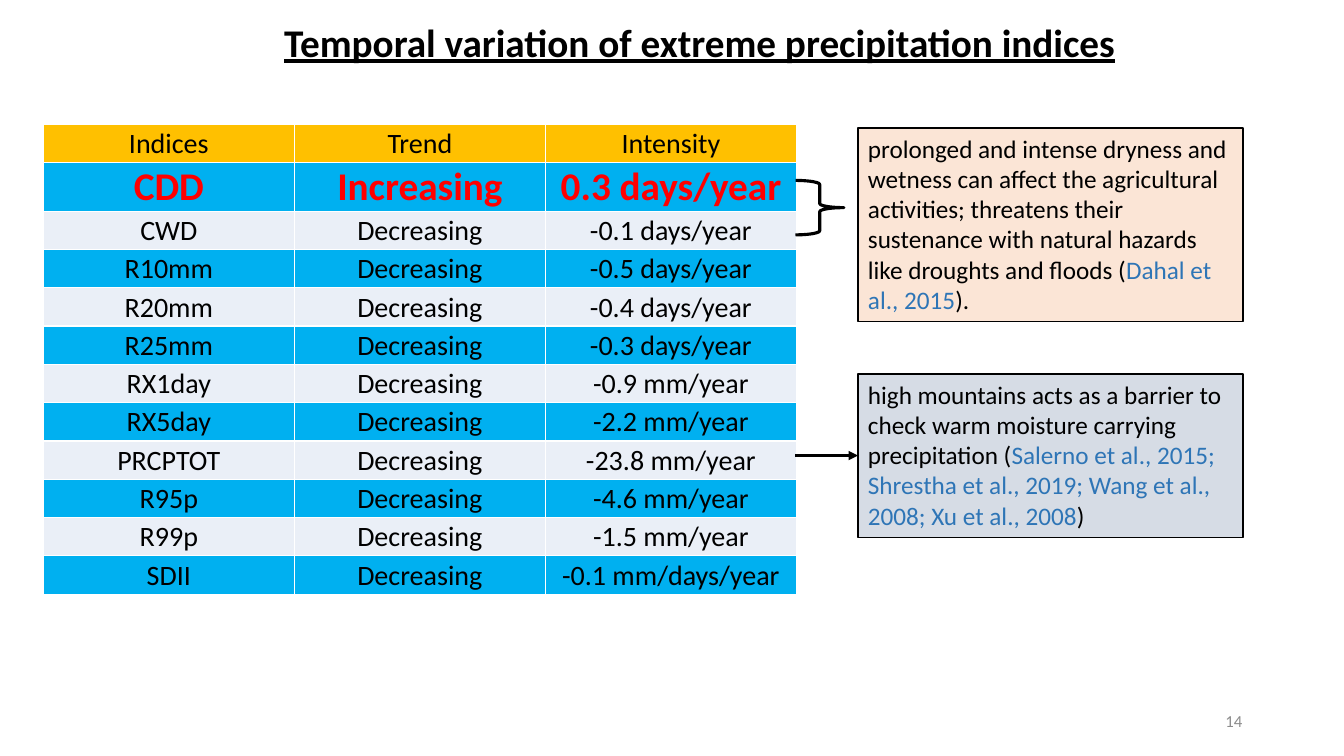
"""Build the slide on temporal variation of extreme precipitation indices."""
from dataclasses import dataclass

from lxml import etree
from pptx import Presentation
from pptx.dml.color import RGBColor
from pptx.enum.shapes import MSO_CONNECTOR, MSO_SHAPE
from pptx.enum.text import MSO_ANCHOR, MSO_AUTO_SIZE, PP_ALIGN
from pptx.oxml.ns import qn
from pptx.util import Pt

EMU_PER_PX = 9144
FONT = "Calibri"
RECTANGLE = MSO_SHAPE.RECTANGLE
RIGHT_BRACE = MSO_SHAPE.RIGHT_BRACE
STRAIGHT = MSO_CONNECTOR.STRAIGHT
MIDDLE, TOP = MSO_ANCHOR.MIDDLE, MSO_ANCHOR.TOP
LEFT, CENTER, RIGHT = PP_ALIGN.LEFT, PP_ALIGN.CENTER, PP_ALIGN.RIGHT
FIT_SHAPE = MSO_AUTO_SIZE.SHAPE_TO_FIT_TEXT
LEFT_SIDE = 1
COLORS = {
    "black": "000000", "white": "FFFFFF", "red": "FF0000", "header": "FFC000",
    "blue_row": "00B0F0", "pale_row": "EAEFF7", "peach": "FBE5D6",
    "slate": "D6DCE5", "citation": "2E75B6", "page": "8C8C8C",
}
TABLE_LEFT, TABLE_TOP, COLUMN_WIDTH, ROW_HEIGHT = 43, 123, 249, 38
HEADER = ("Indices", "Trend", "Intensity")
INTENSITIES = {
    "CDD": "0.3 days/year", "CWD": "-0.1 days/year", "R10mm": "-0.5 days/year",
    "R20mm": "-0.4 days/year", "R25mm": "-0.3 days/year", "RX1day": "-0.9 mm/year",
    "RX5day": "-2.2 mm/year", "PRCPTOT": "-23.8 mm/year", "R95p": "-4.6 mm/year",
    "R99p": "-1.5 mm/year", "SDII": "-0.1 mm/days/year",
}


@dataclass(frozen=True)
class Note:
    top: int
    height: int
    fill: str
    statement: str
    citation: str
    closing: str


@dataclass(frozen=True)
class Label:
    left: int
    top: int
    width: int
    height: int
    text: str
    size: int
    color: str
    align: PP_ALIGN
    anchor: MSO_ANCHOR
    wrap: bool
    heading: bool


NOTES = (
    Note(127, 192, "peach",
         "prolonged and intense dryness and wetness can affect the agricultural activities; "
         "threatens their sustenance with natural hazards like droughts and floods (",
         "Dahal et al., 2015", ")."),
    Note(371, 162, "slate",
         "high mountains acts as a barrier to check warm moisture carrying precipitation (",
         "Salerno et al., 2015; Shrestha et al., 2019; Wang et al., 2008; Xu et al., 2008", ")"),
)
LABELS = (
    Label(272, 13, 854, 57, "Temporal variation of extreme precipitation indices",
          28, "black", LEFT, TOP, False, True),
    Label(942, 695, 300, 40, "14", 12, "page", RIGHT, MIDDLE, True, False),
)


def px(length: int) -> int:
    return length * EMU_PER_PX


def rgb(name: str) -> RGBColor:
    return RGBColor.from_string(COLORS[name])


def style_run(run, size: int, color: str, bold: bool = False) -> None:
    run.font.name = FONT
    run.font.size = Pt(size)
    run.font.bold = bold
    run.font.color.rgb = rgb(color)


def style_line(line, width: float) -> None:
    line.color.rgb = rgb("black")
    line.width = Pt(width)


def add_borders(cell) -> None:
    properties = cell._tc.get_or_add_tcPr()
    for side in ("lnL", "lnR", "lnT", "lnB"):
        border = etree.SubElement(properties, qn(f"a:{side}"), w=str(Pt(1)))
        fill = etree.SubElement(border, qn("a:solidFill"))
        etree.SubElement(fill, qn("a:srgbClr"), val=COLORS["white"])


def fill_cell(cell, text: str, fill: str, emphasized: bool) -> None:
    add_borders(cell)
    cell.fill.solid()
    cell.fill.fore_color.rgb = rgb(fill)
    cell.vertical_anchor = MIDDLE
    cell.margin_left = cell.margin_right = cell.margin_top = px(1)
    cell.margin_bottom = 0
    cell.text_frame.text = text
    paragraph = cell.text_frame.paragraphs[0]
    paragraph.alignment = CENTER
    style_run(paragraph.runs[0], 28 if emphasized else 20,
              "red" if emphasized else "black", emphasized)


def add_index_table(slide) -> None:
    rows = [HEADER] + [
        (index, "Decreasing" if intensity.startswith("-") else "Increasing", intensity)
        for index, intensity in INTENSITIES.items()
    ]
    table = slide.shapes.add_table(
        len(rows), len(HEADER), px(TABLE_LEFT), px(TABLE_TOP),
        px(COLUMN_WIDTH * len(HEADER)), px(ROW_HEIGHT * len(rows))).table
    table.first_row = False
    table.horz_banding = False
    for row_number, row in enumerate(rows):
        band = "blue_row" if row_number % 2 else "pale_row"
        fill = band if row_number else "header"
        for column_number, text in enumerate(row):
            fill_cell(table.cell(row_number, column_number), text, fill,
                      row[1] == "Increasing")


def add_label(slide, label: Label) -> None:
    shape = slide.shapes.add_textbox(
        px(label.left), px(label.top), px(label.width), px(label.height))
    text_frame = shape.text_frame
    text_frame.text = label.text
    text_frame.word_wrap = label.wrap
    text_frame.vertical_anchor = label.anchor
    paragraph = text_frame.paragraphs[0]
    paragraph.alignment = label.align
    run = paragraph.runs[0]
    style_run(run, label.size, label.color, label.heading)
    run.font.underline = label.heading


def add_brace(slide) -> None:
    brace = slide.shapes.add_shape(RIGHT_BRACE, px(789), px(179), px(48), px(54))
    brace.shadow.inherit = False
    brace.fill.background()
    style_line(brace.line, 2.25)


def add_note(slide, note: Note):
    shape = slide.shapes.add_shape(RECTANGLE, px(851), px(note.top), px(382), px(note.height))
    shape.shadow.inherit = False
    shape.fill.solid()
    shape.fill.fore_color.rgb = rgb(note.fill)
    style_line(shape.line, 1)
    text_frame = shape.text_frame
    text_frame.word_wrap = True
    text_frame.auto_size = FIT_SHAPE
    text_frame.vertical_anchor = TOP
    paragraph = text_frame.paragraphs[0]
    paragraph.alignment = LEFT
    for text, color in ((note.statement, "black"), (note.citation, "citation"),
                        (note.closing, "black")):
        run = paragraph.add_run()
        run.text = text
        style_run(run, 18, color)
    return shape


def add_arrow(slide, target) -> None:
    arrow = slide.shapes.add_connector(STRAIGHT, px(789), px(452), px(851), px(452))
    arrow.end_connect(target, LEFT_SIDE)
    style_line(arrow.line, 2.25)
    etree.SubElement(arrow.line._get_or_add_ln(), qn("a:tailEnd"), type="triangle")
    etree.SubElement(arrow._element.spPr, qn("a:effectLst"))


def main() -> None:
    presentation = Presentation()
    presentation.slide_width = px(1333)
    presentation.slide_height = px(750)
    slide = presentation.slides.add_slide(presentation.slide_layouts[6])
    add_index_table(slide)
    for label in LABELS:
        add_label(slide, label)
    add_brace(slide)
    note_shapes = [add_note(slide, note) for note in NOTES]
    add_arrow(slide, note_shapes[-1])
    presentation.save("out.pptx")


if __name__ == "__main__":
    main()
